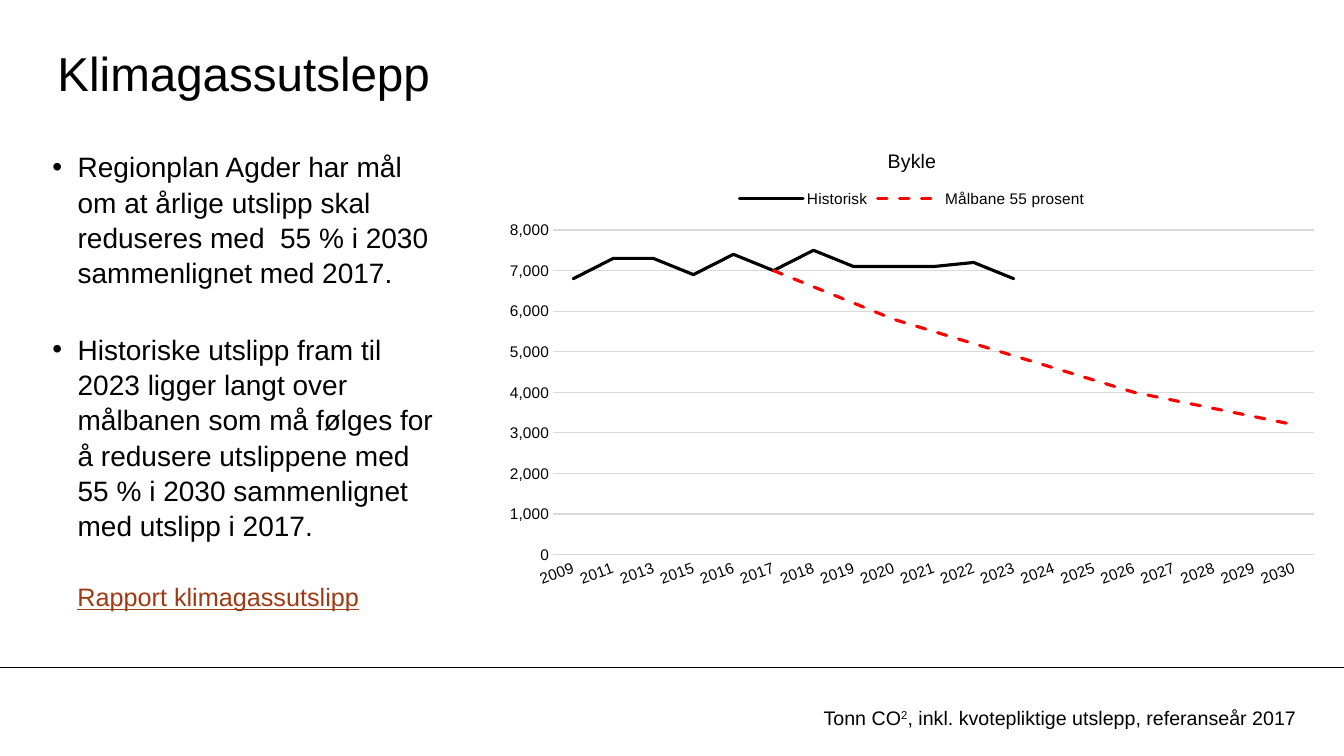
from dataclasses import dataclass
from typing import Optional

from lxml import etree
from pptx import Presentation
from pptx.chart import data as chart_data
from pptx.dml.color import RGBColor
from pptx.enum import chart as chart_enum, dml, shapes, text
from pptx.oxml import ns
from pptx.util import Inches, Pt

BLACK = RGBColor(0x00, 0x00, 0x00)
WHITE = RGBColor(0xFF, 0xFF, 0xFF)
RED = RGBColor(0xFF, 0x00, 0x00)
RUST = RGBColor(0x9F, 0x3A, 0x14)
GREY = RGBColor(0xD9, 0xD9, 0xD9)
FONT = "Arial"
YEARS = ["2009", "2011", "2013", *(str(year) for year in range(2015, 2031))]


@dataclass(frozen=True)
class TextBlock:
    left: float
    top: float
    width: float
    height: float
    size: float
    paragraphs: tuple[str, ...]
    color: RGBColor = BLACK
    underline: bool = False
    bulleted: bool = False
    inset: bool = True
    anchor: text.MSO_ANCHOR = text.MSO_ANCHOR.TOP


@dataclass(frozen=True)
class EmissionSeries:
    name: str
    first_year: str
    values: tuple[int, ...]
    color: RGBColor
    dash: Optional[dml.MSO_LINE] = None


BLOCKS = (
    TextBlock(0.57, 0.34, 11.1, 0.75, 34, ("Klimagassutslepp",),
              inset=False, anchor=text.MSO_ANCHOR.MIDDLE),
    TextBlock(0.52, 1.47, 3.78, 3.86, 20, (
        "Regionplan Agder har mål om at årlige utslipp skal reduseres med  55 % i 2030 "
        "sammenlignet med 2017.",
        "Historiske utslipp fram til 2023 ligger langt over målbanen som må følges for å "
        "redusere utslippene med 55 % i 2030 sammenlignet med utslipp i 2017.",
    ), bulleted=True, inset=False),
    TextBlock(0.67, 5.72, 3.16, 0.4, 18, ("Rapport klimagassutslipp",),
              color=RUST, underline=True),
)
FOOTNOTE = TextBlock(8.07, 6.95, 5.09, 0.34, 14, ("Tonn CO",))

SERIES = (
    EmissionSeries("Historisk", "2009",
                   (6800, 7300, 7300, 6900, 7400, 7000, 7500, 7100, 7100, 7100, 7200, 6800),
                   BLACK),
    EmissionSeries("Målbane 55 prosent", "2017",
                   (7000, 6600, 6200, 5800, 5500, 5200, 4900, 4600, 4300, 4000, 3800, 3600,
                    3400, 3200),
                   RED, dml.MSO_LINE.DASH),
)


def style_font(font, size: float, color: RGBColor = BLACK) -> None:
    font.name = FONT
    font.size = Pt(size)
    font.bold = False
    font.color.rgb = color


def add_bullet(paragraph) -> None:
    properties = paragraph._p.get_or_add_pPr()
    properties.set("marL", str(Inches(0.25)))
    properties.set("indent", str(Inches(-0.25)))
    bullet_font = etree.SubElement(properties, ns.qn("a:buFont"))
    bullet_font.set("typeface", FONT)
    bullet = etree.SubElement(properties, ns.qn("a:buChar"))
    bullet.set("char", "•")


def add_text(slide, block: TextBlock):
    shape = slide.shapes.add_textbox(Inches(block.left), Inches(block.top),
                                     Inches(block.width), Inches(block.height))
    frame = shape.text_frame
    frame.word_wrap = True
    frame.vertical_anchor = block.anchor
    if not block.inset:
        frame.margin_left = frame.margin_right = 0
        frame.margin_top = frame.margin_bottom = 0
    for index, wording in enumerate(block.paragraphs):
        paragraph = frame.add_paragraph() if index else frame.paragraphs[0]
        paragraph.text = wording
        if block.bulleted:
            add_bullet(paragraph)
            paragraph.line_spacing = 1.05
        if index:
            paragraph.space_before = Pt(29.5)
        style_font(paragraph.font, block.size, block.color)
        if block.underline:
            paragraph.font.underline = True
    return shape


def add_footnote(slide) -> None:
    paragraph = add_text(slide, FOOTNOTE).text_frame.paragraphs[0]
    exponent = paragraph.add_run()
    exponent.text = "2"
    exponent.font._element.set("baseline", "30000")
    paragraph.add_run().text = ", inkl. kvotepliktige utslepp, referanseår 2017"


def add_footer_line(slide, width: int) -> None:
    line = slide.shapes.add_connector(shapes.MSO_CONNECTOR.STRAIGHT,
                                      0, Inches(6.62), width, Inches(6.62))
    line.line.color.rgb = BLACK
    line.line.width = Pt(0.75)
    etree.SubElement(line._element.spPr, ns.qn("a:effectLst"))


def style_axis(axis, number_format: str) -> None:
    axis.major_tick_mark = axis.minor_tick_mark = chart_enum.XL_TICK_MARK.NONE
    axis.tick_labels.number_format = number_format
    axis.tick_labels.number_format_is_linked = False
    style_font(axis.tick_labels.font, 11)


def add_emission_chart(slide) -> None:
    emissions = chart_data.CategoryChartData(number_format="#,##0")
    emissions.categories = YEARS
    for series in SERIES:
        before = YEARS.index(series.first_year)
        after = len(YEARS) - before - len(series.values)
        emissions.add_series(series.name, [None] * before + list(series.values) + [None] * after)
    chart = slide.shapes.add_chart(chart_enum.XL_CHART_TYPE.LINE, Inches(4.89), Inches(1.29),
                                   Inches(8.31), Inches(4.63), emissions).chart
    style_font(chart.font, 10)
    chart.has_title = True
    title = chart.chart_title
    title.include_in_layout = False
    title.text_frame.text = "Bykle"
    style_font(title.text_frame.paragraphs[0].font, 14)
    chart.has_legend = True
    chart.legend.position = chart_enum.XL_LEGEND_POSITION.TOP
    chart.legend.include_in_layout = False
    style_font(chart.legend.font, 11)

    years = chart.category_axis
    style_axis(years, "0")
    years.format.line.color.rgb = GREY
    years.format.line.width = Pt(0.75)
    label_body = years._element.find(ns.qn("c:txPr")).find(ns.qn("a:bodyPr"))
    label_body.set("rot", str(-20 * 60000))
    tonnes = chart.value_axis
    style_axis(tonnes, "#,##0")
    tonnes.minimum_scale, tonnes.maximum_scale, tonnes.major_unit = 0, 8000, 1000
    tonnes.format.line.fill.background()
    tonnes.major_gridlines.format.line.color.rgb = GREY
    tonnes.major_gridlines.format.line.width = Pt(0.75)

    plot = chart.plots[0]
    plot.vary_by_categories = False
    for line, series in zip(plot.series, SERIES):
        line.smooth = False
        line.marker.style = chart_enum.XL_MARKER_STYLE.NONE
        line.format.line.color.rgb = series.color
        line.format.line.width = Pt(2.25)
        if series.dash is not None:
            line.format.line.dash_style = series.dash
        line._element.spPr.find(ns.qn("a:ln")).set("cap", "rnd")


def main() -> None:
    presentation = Presentation()
    presentation.slide_width = Inches(13.33)
    presentation.slide_height = Inches(7.5)
    slide = presentation.slides.add_slide(presentation.slide_layouts[6])
    slide.background.fill.solid()
    slide.background.fill.fore_color.rgb = WHITE
    add_footer_line(slide, presentation.slide_width)
    for block in BLOCKS:
        add_text(slide, block)
    add_footnote(slide)
    add_emission_chart(slide)
    presentation.save("out.pptx")


if __name__ == "__main__":
    main()
